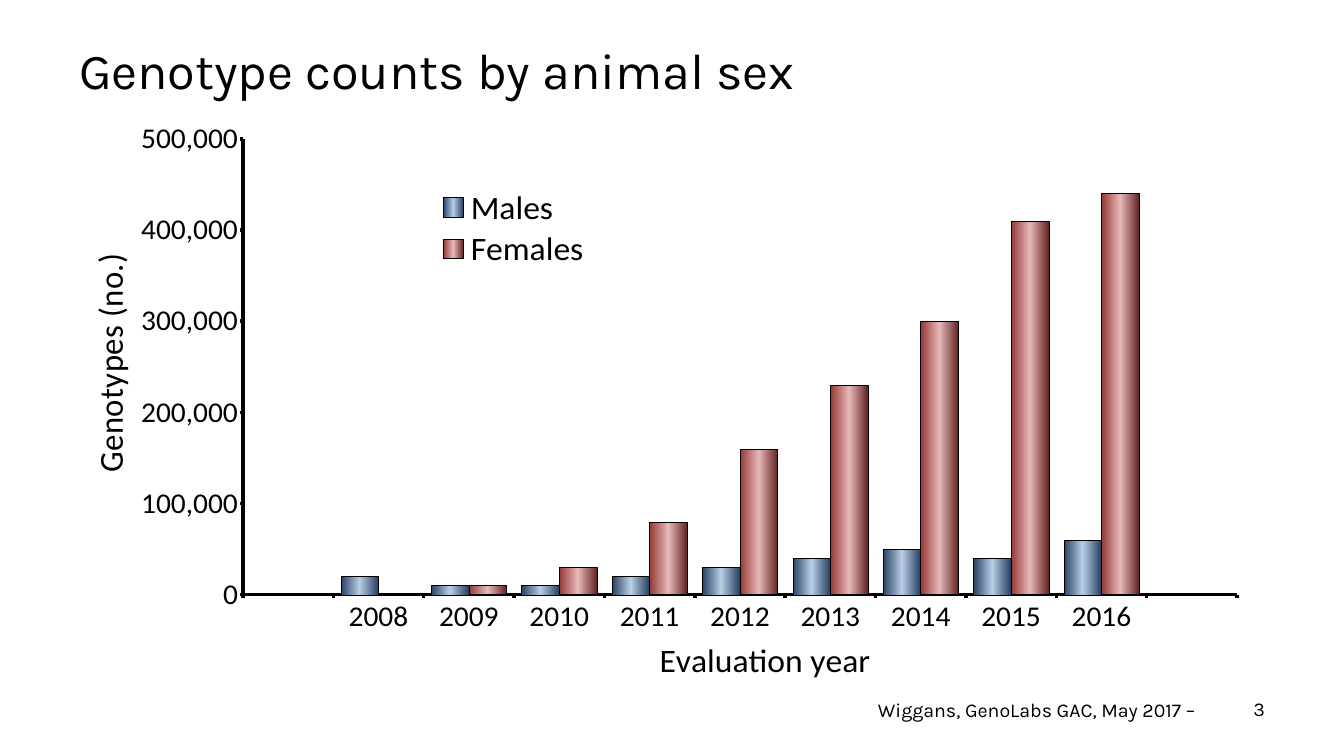
from dataclasses import dataclass

from lxml.etree import SubElement
from pptx import Presentation
from pptx.chart.data import CategoryChartData
from pptx.dml.color import RGBColor
from pptx.enum.chart import XL_CHART_TYPE, XL_LEGEND_POSITION, XL_TICK_MARK
from pptx.enum.text import MSO_ANCHOR, PP_ALIGN
from pptx.oxml.ns import qn
from pptx.util import Emu, Pt

PX = 9144
COLORS = {
    "ink": "000000",
    "paper": "FFFFFF",
    "navy": "254061",
    "sky": "B9CDE5",
    "brick": "953735",
    "rose": "E6B9B8",
    "maroon": "632523",
}
YEARS = [str(year) for year in range(2008, 2017)]


@dataclass(frozen=True)
class Box:
    left: int
    top: int
    width: int
    height: int

    def emu(self) -> tuple:
        return tuple(Emu(side * PX) for side in (self.left, self.top, self.width, self.height))


@dataclass(frozen=True)
class Label:
    text: str
    size: int
    align: PP_ALIGN
    anchor: MSO_ANCHOR
    inset_x: int
    inset_y: int


@dataclass(frozen=True)
class Bars:
    name: str
    thousands: tuple
    gradient: tuple
    outline: float


SERIES = (
    Bars("Males", (20, 10, 10, 20, 30, 40, 50, 40, 60), ("navy", "sky", "navy"), 0.5),
    Bars("Females", (0, 10, 30, 80, 160, 230, 300, 410, 440), ("brick", "rose", "maroon"), 0.75),
)


def color(name: str) -> RGBColor:
    return RGBColor.from_string(COLORS[name])


def set_font(font, face: str, size: int) -> None:
    font.name = face
    font.size = Pt(size)
    font.bold = False
    font.color.rgb = color("ink")


def write_label(shape, label: Label) -> None:
    frame = shape.text_frame
    frame.word_wrap = True
    frame.vertical_anchor = label.anchor
    frame.margin_left = frame.margin_right = Emu(label.inset_x * PX)
    frame.margin_top = frame.margin_bottom = Emu(label.inset_y * PX)
    para = frame.paragraphs[0]
    para.alignment = label.align
    span = para.add_run()
    span.text = label.text
    set_font(span.font, "Karla", label.size)


def add_layout(parent, position: int, **values) -> None:
    for old in parent.findall(qn("c:layout")):
        parent.remove(old)
    layout = parent.makeelement(qn("c:layout"), {})
    parent.insert(position, layout)
    manual = SubElement(layout, qn("c:manualLayout"))
    for tag, value in values.items():
        SubElement(manual, qn(f"c:{tag}"), val=str(value))


def style_axis(axis, title: str, left: float, top: float) -> None:
    axis.has_major_gridlines = False
    axis.major_tick_mark = XL_TICK_MARK.OUTSIDE
    axis.minor_tick_mark = XL_TICK_MARK.NONE
    axis.format.line.color.rgb = color("ink")
    axis.format.line.width = Pt(5)
    set_font(axis.tick_labels.font, "Calibri", 42)
    span = axis.axis_title.text_frame.paragraphs[0].add_run()
    span.text = title
    set_font(span.font, "Calibri", 48)
    add_layout(axis.axis_title._element, 1, xMode="edge", yMode="edge", x=left, y=top)


def style_bars(series, bars: Bars) -> None:
    series.invert_if_negative = False
    series.format.line.color.rgb = color("ink")
    series.format.line.width = Pt(bars.outline)
    series.format.fill.gradient()
    series.format.fill.gradient_angle = 0
    stops = series._element.xpath("./c:spPr/a:gradFill/a:gsLst")[0]
    for stop in list(stops):
        stops.remove(stop)
    for index, name in enumerate(bars.gradient):
        stop = SubElement(stops, qn("a:gs"), pos=str(index * 50000))
        SubElement(stop, qn("a:srgbClr"), val=COLORS[name])


def add_genotype_chart(page, box: Box) -> None:
    data = CategoryChartData(number_format="#,##0")
    data.categories = ["", *YEARS, ""]
    for bars in SERIES:
        data.add_series(bars.name, [None, *(count * 1000 for count in bars.thousands), None])
    chart = page.shapes.add_chart(XL_CHART_TYPE.COLUMN_CLUSTERED, *box.emu(), data).chart
    chart.has_title = False
    set_font(chart.font, "League Spartan", 10)

    plot = chart.plots[0]
    plot.gap_width = 40
    plot.overlap = 0
    plot.vary_by_categories = False
    for series, bars in zip(plot.series, SERIES):
        style_bars(series, bars)

    style_axis(chart.category_axis, "Evaluation year", 0.49, 0.92)
    values = chart.value_axis
    style_axis(values, "Genotypes (no.)", 0.02, 0.24)
    values.minimum_scale = 0
    values.maximum_scale = 500000
    values.major_unit = 100000
    values.tick_labels.number_format = "#,##0"
    values.tick_labels.number_format_is_linked = False

    chart.has_legend = True
    chart.legend.position = XL_LEGEND_POSITION.RIGHT
    chart.legend.include_in_layout = False
    set_font(chart.legend.font, "Calibri", 48)
    add_layout(chart.legend._element, 1, xMode="edge", yMode="edge", x=0.31, y=0.12, w=0.13, h=0.15)
    plot_area = chart._chartSpace.chart.plotArea
    add_layout(plot_area, 0, layoutTarget="inner", xMode="edge", yMode="edge",
               x=0.153, y=0.034, w=0.816, h=0.82)


def main() -> None:
    deck = Presentation()
    deck.slide_width = Emu(2665 * PX)
    deck.slide_height = Emu(1500 * PX)
    page = deck.slides.add_slide(deck.slide_layouts[5])
    page.background.fill.solid()
    page.background.fill.fore_color.rgb = color("paper")

    footer = page.shapes.add_textbox(*Box(1731, 1379, 735, 57).emu())
    write_label(footer, Label("Wiggans, GenoLabs GAC, May 2017 –", 28, PP_ALIGN.LEFT, MSO_ANCHOR.TOP, 10, 5))

    title = page.shapes.title
    title.left, title.top, title.width, title.height = Box(133, 25, 2398, 225).emu()
    write_label(title, Label("Genotype counts by animal sex", 72, PP_ALIGN.LEFT, MSO_ANCHOR.MIDDLE, 24, 12))

    number = page.shapes.add_textbox(*Box(1841, 1366, 691, 80).emu())
    write_label(number, Label("3", 28, PP_ALIGN.RIGHT, MSO_ANCHOR.MIDDLE, 24, 12))

    add_genotype_chart(page, Box(112, 238, 2416, 1133))
    deck.save("out.pptx")


if __name__ == "__main__":
    main()
